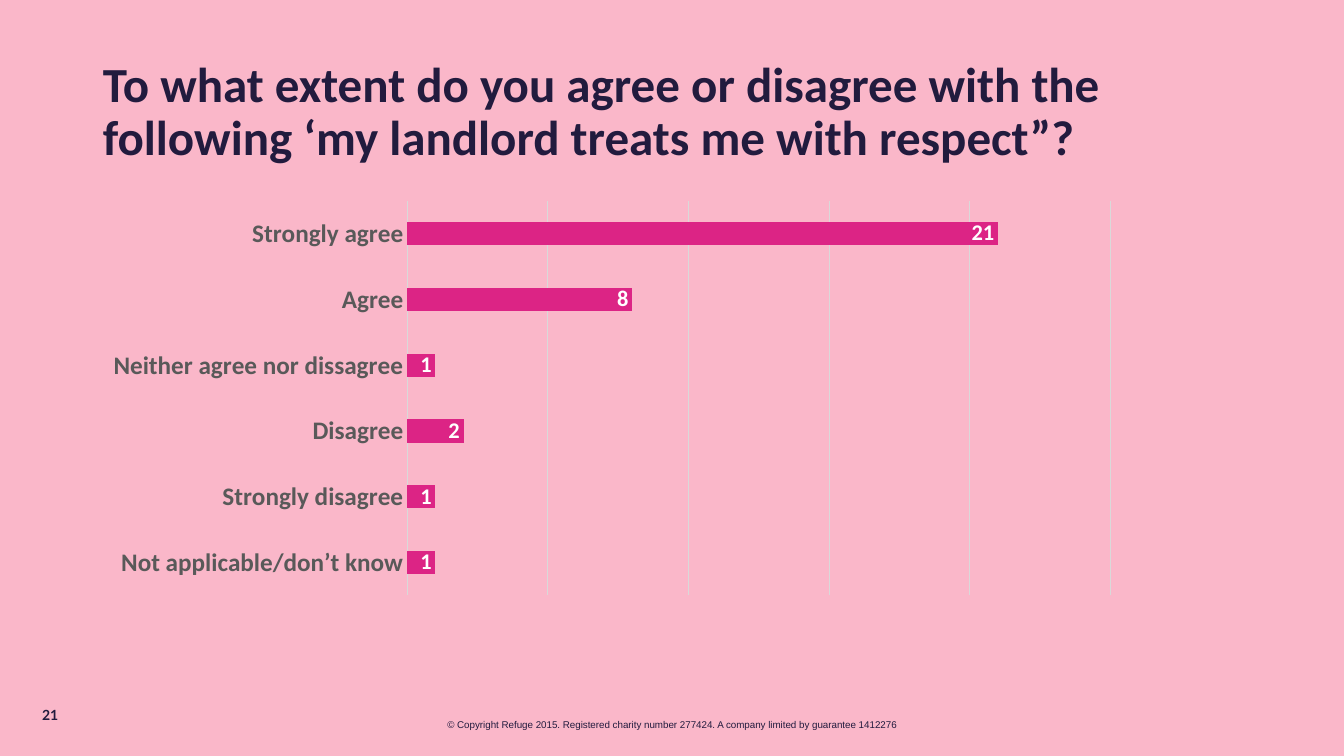
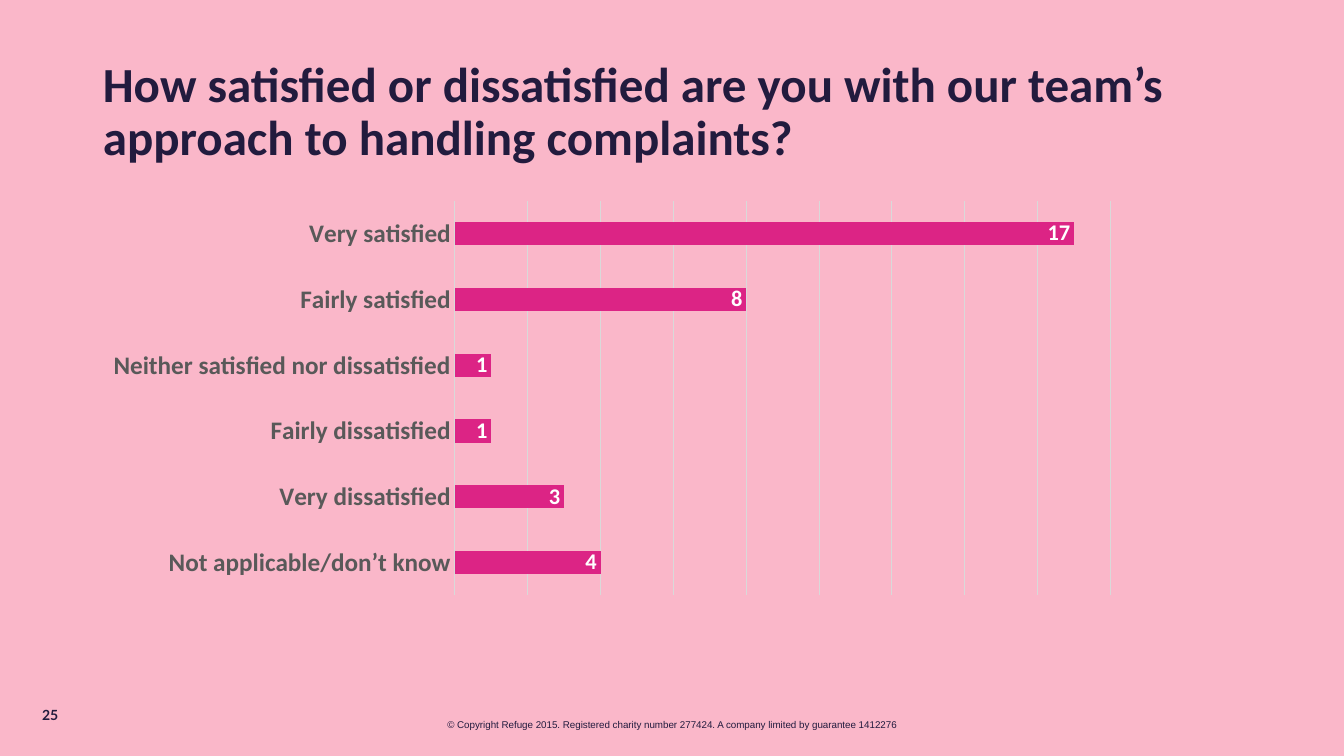
"""Build two survey result slides, each with one bar chart."""
from pptx import Presentation
from pptx import util as u
from pptx.chart.data import CategoryChartData
from pptx.dml.color import RGBColor
from pptx.enum import chart as ch, text as tx

HUES = {"back": "FAB7C9", "ink": "221B3E", "bar": "DC2485",
        "grid": "D9D9D9", "label": "595959", "white": "FFFFFF", "black": "000000"}
WIDE, HIGH = 13.33, 7.5
LEFT = 0.92
SPOTS = {"title": (LEFT, 0.4, 11.65, 1.45), "chart": (LEFT, 1.91, 10.3, 4.08),
         "foot": (0, 7.08, WIDE, 0.22), "page": (0.32, 6.96, 3, 0.4)}
FONTS = {"title": ("Calibri", 35, True, "ink"), "foot": ("Arial", 7, False, "ink"),
         "page": ("Lato", 10, True, "ink"), "chart": ("Calibri", 10, False, "black"),
         "axis": ("Calibri", 18, True, "label"), "value": ("Calibri", 16, True, "white")}
FOOT = ("© Copyright Refuge 2015. Registered charity number 277424. "
        "A company limited by guarantee 1412276")
PAGES = [
    {"page": "21", "step": 5, "top": 25,
     "title": "To what extent do you agree or disagree with the following "
              "‘my landlord treats me with respect”?",
     "rows": [("Not applicable/don’t know", 1), ("Strongly disagree", 1), ("Disagree", 2),
              ("Neither agree nor dissagree", 1), ("Agree", 8), ("Strongly agree", 21)]},
    {"page": "25", "step": 2, "top": 18,
     "title": "How satisfied or dissatisfied are you with our team’s "
              "approach to handling complaints?",
     "rows": [("Not applicable/don’t know", 4), ("Very dissatisfied", 3),
              ("Fairly dissatisfied", 1), ("Neither satisfied nor dissatisfied", 1),
              ("Fairly satisfied", 8), ("Very satisfied", 17)]},
]


def hue(name):
    return RGBColor.from_string(HUES[name])


def spot(name):
    return [u.Inches(n) for n in SPOTS[name]]


def apply(item, **vals):
    for key, val in vals.items():
        setattr(item, key, val)


def style(font, name):
    face, size, bold, tone = FONTS[name]
    apply(font, name=face, size=u.Pt(size), bold=bold)
    font.color.rgb = hue(tone)


def rule(line):
    line.color.rgb = hue("grid")
    line.width = u.Pt(0.75)


def write(frame, words, name, align=tx.PP_ALIGN.LEFT):
    apply(frame, word_wrap=True, auto_size=tx.MSO_AUTO_SIZE.NONE)
    para = frame.paragraphs[0]
    para.alignment = align
    run = para.add_run()
    run.text = words
    style(run.font, name)
    return para


def head(slide, words):
    box = slide.shapes.title
    box.left, box.top, box.width, box.height = spot("title")
    box.text_frame.vertical_anchor = tx.MSO_ANCHOR.MIDDLE
    write(box.text_frame, words, "title").line_spacing = 0.9


def label(slide, words, name, align=tx.PP_ALIGN.LEFT):
    write(slide.shapes.add_textbox(*spot(name)).text_frame, words, name, align)


def bars(slide, rows, step, top):
    data = CategoryChartData()
    data.categories, vals = zip(*rows)
    data.add_series("Series 1", vals)
    chart = slide.shapes.add_chart(
        ch.XL_CHART_TYPE.BAR_CLUSTERED, *spot("chart"), data).chart
    apply(chart, has_legend=False, has_title=False)
    style(chart.font, "chart")

    cats = chart.category_axis
    apply(cats, major_tick_mark=ch.XL_TICK_MARK.NONE, has_major_gridlines=False)
    style(cats.tick_labels.font, "axis")
    rule(cats.format.line)

    axis = chart.value_axis
    apply(axis, minimum_scale=0, maximum_scale=top, major_unit=step,
          has_major_gridlines=True, visible=False)
    rule(axis.major_gridlines.format.line)

    plot = chart.plots[0]
    apply(plot, gap_width=182, vary_by_categories=False, has_data_labels=True)
    apply(plot.data_labels, show_value=True, position=ch.XL_LABEL_POSITION.INSIDE_END)
    style(plot.data_labels.font, "value")
    fill = plot.series[0].format.fill
    fill.solid()
    fill.fore_color.rgb = hue("bar")


def main():
    deck = Presentation()
    apply(deck, slide_width=u.Inches(WIDE), slide_height=u.Inches(HIGH))
    back = deck.slide_master.background.fill
    back.solid()
    back.fore_color.rgb = hue("back")
    for page in PAGES:
        slide = deck.slides.add_slide(deck.slide_layouts[5])
        head(slide, page["title"])
        label(slide, FOOT, "foot", tx.PP_ALIGN.CENTER)
        label(slide, page["page"], "page")
        bars(slide, page["rows"], page["step"], page["top"])
    deck.save("out.pptx")


if __name__ == "__main__":
    main()
